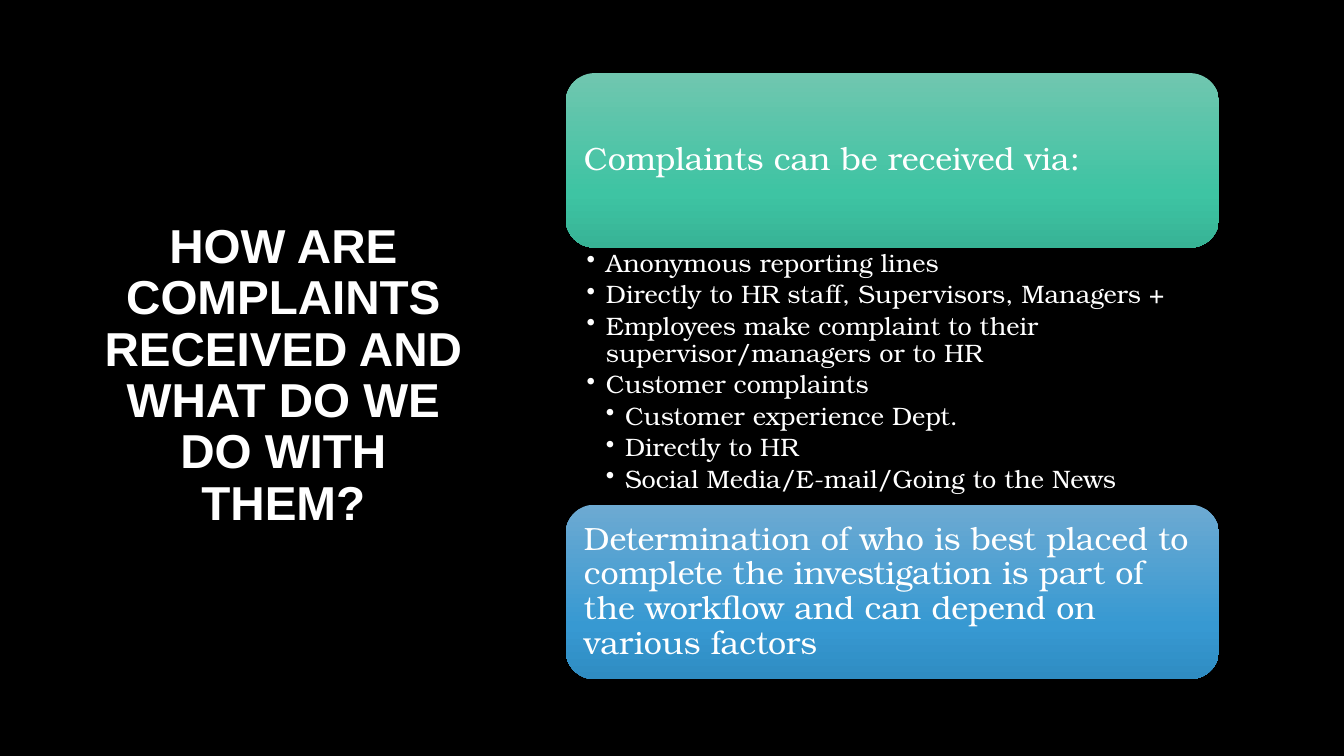
from dataclasses import dataclass

from lxml.etree import SubElement
from pptx import Presentation
from pptx.dml.color import RGBColor
from pptx.enum.shapes import MSO_SHAPE
from pptx.enum.text import MSO_ANCHOR, PP_ALIGN
from pptx.oxml.ns import qn
from pptx.util import Inches, Pt


@dataclass(frozen=True)
class Theme:
    background: str = "000000"
    text: str = "FFFFFF"
    green: tuple = ((0, "70C6AF"), (69, "3EC4A3"), (100, "37B395"))
    blue: tuple = ((0, "6DAAD2"), (69, "3799D2"), (100, "2F8CC2"))
    title_font: str = "Arial"
    body_font: str = "TeX Gyre Bonum"
    title_size: int = 34
    card_size: int = 23
    list_size: int = 18


class Deck:
    """Draws slide elements in one theme on a grid of 24 columns and 12 rows."""

    def __init__(self, prs, theme):
        self.theme = theme
        self.col = prs.slide_width / 24
        self.row = prs.slide_height / 12
        self.s = prs.slides.add_slide(prs.slide_layouts[6])
        fill = self.s.background.fill
        fill.solid()
        fill.fore_color.rgb = RGBColor.from_string(theme.background)

    def box(self, left, top, width, height):
        return (round(left * self.col), round(top * self.row),
                round(width * self.col), round(height * self.row))

    def frame(self, sp, anchor, insets):
        tf = sp.text_frame
        sides = ("margin_left", "margin_top", "margin_right", "margin_bottom")
        values = dict(zip(sides, map(Inches, insets)))
        for name, value in {"word_wrap": True, "vertical_anchor": anchor, **values}.items():
            setattr(tf, name, value)
        return tf

    def add_text(self, p, text, font, size, bold=False, align=PP_ALIGN.LEFT, after=0):
        r = p.add_run()
        r.text = text
        layout = {"alignment": align, "line_spacing": 0.9, "space_after": Pt(after)}
        style = {"name": font, "size": Pt(size), "bold": bold}
        for target, values in ((p, layout), (r.font, style)):
            for name, value in values.items():
                setattr(target, name, value)
        r.font.color.rgb = RGBColor.from_string(self.theme.text)

    def title(self, text, *cells):
        sp = self.s.shapes.add_textbox(*self.box(*cells))
        tf = self.frame(sp, MSO_ANCHOR.MIDDLE, (0.1, 0.05, 0.1, 0.05))
        self.add_text(tf.paragraphs[0], text, self.theme.title_font,
                      self.theme.title_size, True, PP_ALIGN.CENTER)

    def card(self, text, stops, *cells):
        sp = self.s.shapes.add_shape(MSO_SHAPE.ROUNDED_RECTANGLE, *self.box(*cells))
        sp.shadow.inherit = False
        sp.line.fill.background()
        sp.fill.gradient()
        sp.fill.gradient_angle = 270
        stop_list = sp._element.spPr.find(qn("a:gradFill")).find(qn("a:gsLst"))
        for old in list(stop_list):
            stop_list.remove(old)
        for position, color in stops:
            stop = SubElement(stop_list, qn("a:gs"), pos=str(position * 1000))
            SubElement(stop, qn("a:srgbClr"), val=color)
        tf = self.frame(sp, MSO_ANCHOR.MIDDLE, (0.1, 0.1, 0.1, 0.1))
        self.add_text(tf.paragraphs[0], text, self.theme.body_font, self.theme.card_size)

    def bullets(self, items, *cells):
        sp = self.s.shapes.add_textbox(*self.box(*cells))
        tf = self.frame(sp, MSO_ANCHOR.TOP, (0.21, 0.03, 0.18, 0.03))
        indent = Inches(0.19)
        for i, (level, text) in enumerate(items):
            p = tf.add_paragraph() if i else tf.paragraphs[0]
            p.level = level
            pPr = p._p.get_or_add_pPr()
            pPr.set("marL", str(indent * level))
            pPr.set("indent", str(-indent))
            SubElement(pPr, qn("a:buChar"), char="•")
            self.add_text(p, text, self.theme.body_font, self.theme.list_size, after=3)


CHANNELS = (
    (1, "Anonymous reporting lines"),
    (1, "Directly to HR staff, Supervisors, Managers +"),
    (1, "Employees make complaint to their supervisor/managers or to HR"),
    (1, "Customer complaints"),
    (2, "Customer experience Dept."),
    (2, "Directly to HR"),
    (2, "Social Media/E-mail/Going to the News"),
)


def main():
    prs = Presentation()
    prs.slide_width, prs.slide_height = Inches(13.33), Inches(7.5)
    theme = Theme()
    deck = Deck(prs, theme)
    deck.title("HOW ARE COMPLAINTS RECEIVED AND WHAT DO WE DO WITH THEM?",
               1.48, 1.07, 7.16, 9.81)
    left, top, width = 10.1, 1.16, 11.67
    card_height, list_height = 2.77, 4.08
    list_top = top + card_height
    deck.card("Complaints can be received via:", theme.green,
              left, top, width, card_height)
    deck.bullets(CHANNELS, left, list_top, width, list_height)
    deck.card("Determination of who is best placed to complete the investigation "
              "is part of the workflow and can depend on various factors", theme.blue,
              left, list_top + list_height, width, card_height)
    prs.save("out.pptx")


if __name__ == "__main__":
    main()
